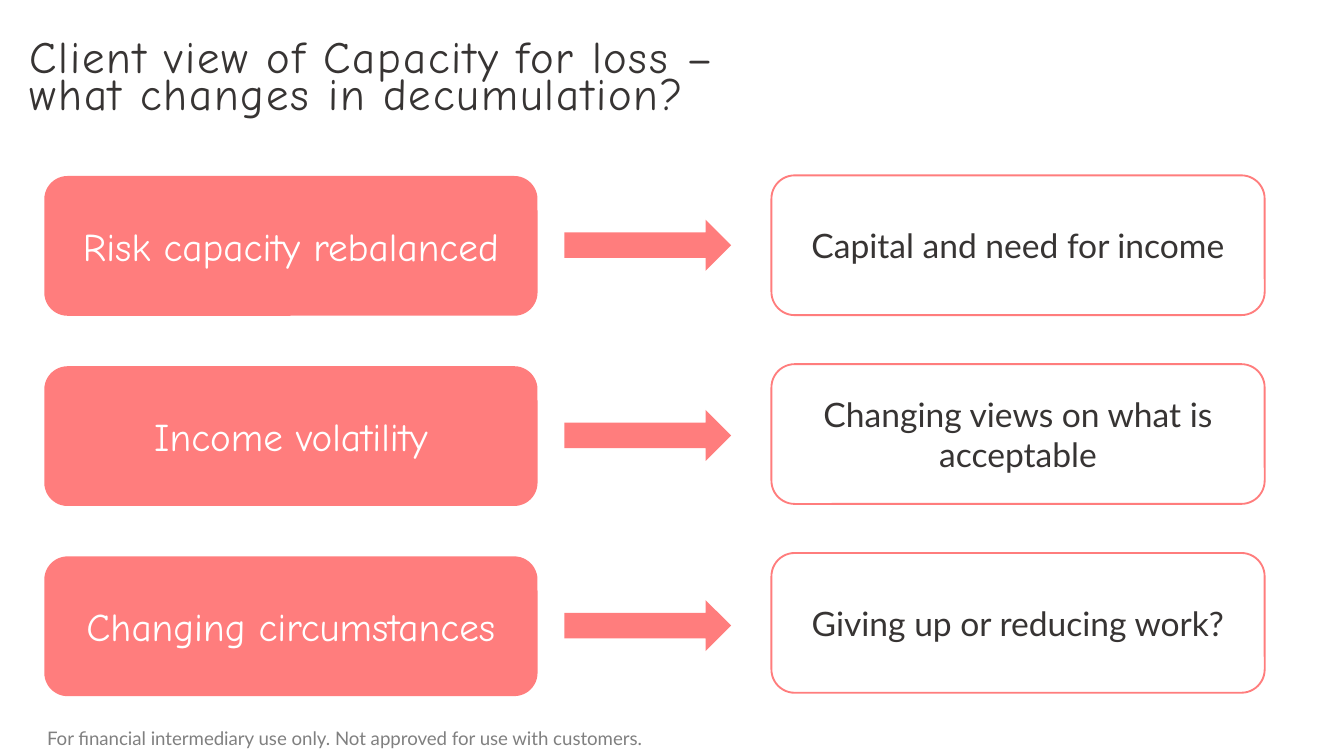
from pptx import Presentation
from pptx.dml.color import RGBColor
from pptx.enum.shapes import MSO_SHAPE
from pptx.enum.text import MSO_ANCHOR, PP_ALIGN
from pptx.util import Pt

SCALE = 4572
CORAL = RGBColor(0xFF, 0x7D, 0x7D)
WHITE = RGBColor(0xFF, 0xFF, 0xFF)
DARK = RGBColor(0x37, 0x34, 0x33)
GREY = RGBColor(0x80, 0x80, 0x80)
HAND, SANS = "Comic Neue", "Lato"
TOPICS = ["Risk capacity rebalanced", "Income volatility", "Changing circumstances"]
VIEWS = [
    "Capital and need for income",
    "Changing views on what is acceptable",
    "Giving up or reducing work?",
]


def emu(*sizes):
    """Turn px lengths into EMU."""
    return [size * SCALE for size in sizes]


def add_run(para, text, size, face, color):
    """Add one styled run to a paragraph."""
    run = para.add_run()
    run.text = text
    run.font.size = Pt(size)
    run.font.name = face
    run.font.color.rgb = color
    return run


def add_text(slide, box, insets, anchor):
    """Place an empty wrapped text box and return its first paragraph."""
    frame = slide.shapes.add_textbox(*emu(*box)).text_frame
    frame.word_wrap = True
    frame.vertical_anchor = anchor
    (frame.margin_left, frame.margin_top,
     frame.margin_right, frame.margin_bottom) = emu(*insets)
    return frame.paragraphs[0]


def add_title(slide, box):
    """Place the two-line title at the foot of its box."""
    para = add_text(slide, box, (8, 4, 8, 4), MSO_ANCHOR.BOTTOM)
    para.line_spacing = 0.7
    lines = ["Client view of Capacity for loss – ", "what changes in decumulation?"]
    for index, line in enumerate(lines):
        if index:
            para.add_line_break()
        run = add_run(para, line, 24, HAND, DARK)
        run.font._element.set("spc", "100")


def add_note(slide, box):
    """Place the small print."""
    para = add_text(slide, box, (8, 10, 20, 10), MSO_ANCHOR.MIDDLE)
    text = "For financial intermediary use only. Not approved for use with customers."
    add_run(para, text, 10, SANS, GREY)


def add_form(slide, kind, box, filled):
    """Add a coral shape, either filled or outlined."""
    shape = slide.shapes.add_shape(kind, *emu(*box))
    shape.shadow.inherit = False
    if filled:
        shape.fill.solid()
        shape.fill.fore_color.rgb = CORAL
        shape.line.fill.background()
    else:
        shape.fill.background()
        shape.line.color.rgb = CORAL
        shape.line.width = Pt(1)
    return shape


def add_cards(slide, box, pitch, texts, filled):
    """Stack rounded cards with centred text, the first one in the box."""
    left, top, width, height = box
    style = (21, HAND, WHITE) if filled else (18, SANS, DARK)
    for index, text in enumerate(texts):
        place = (left, top + index * pitch, width, height)
        card = add_form(slide, MSO_SHAPE.ROUNDED_RECTANGLE, place, filled)
        frame = card.text_frame
        frame.word_wrap = True
        frame.vertical_anchor = MSO_ANCHOR.MIDDLE
        para = frame.paragraphs[0]
        para.alignment = PP_ALIGN.CENTER
        add_run(para, text, *style)


def add_arrows(slide, box, pitch, count):
    """Stack right arrows, the first one in the box."""
    left, top, width, height = box
    for index in range(count):
        place = (left, top + index * pitch, width, height)
        add_form(slide, MSO_SHAPE.RIGHT_ARROW, place, True)


def main():
    """Build and save the slide."""
    deck = Presentation()
    deck.slide_width, deck.slide_height = emu(2000, 1125)
    slide = deck.slides.add_slide(deck.slide_layouts[6])
    add_note(slide, (62, 1079, 1370, 40))
    add_title(slide, (36, -2, 2104, 182))
    add_cards(slide, (66, 262, 734, 208), 283, TOPICS, True)
    add_cards(slide, (1148, 261, 734, 208), 281, VIEWS, False)
    add_arrows(slide, (840, 327, 248, 76), 283, len(TOPICS))
    deck.save("out.pptx")


if __name__ == "__main__":
    main()
